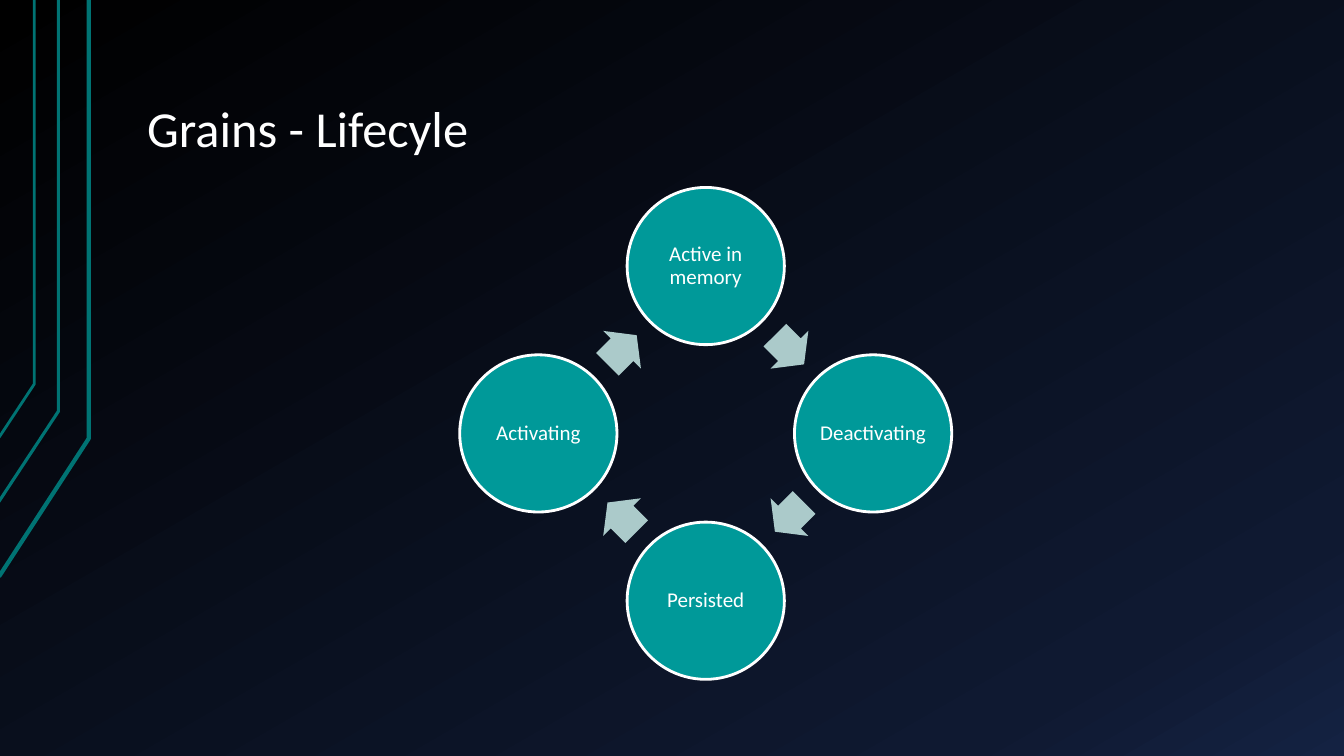
from copy import deepcopy
from math import cos, radians, sin

from pptx import Presentation
from pptx.dml.color import RGBColor
from pptx.enum.shapes import MSO_SHAPE
from pptx.enum.text import MSO_ANCHOR, PP_ALIGN
from pptx.oxml.ns import qn
from pptx.util import Inches, Pt

BACKGROUND_STOPS = [(0, "000000"), (0.85, "0F1931"), (1, "142242")]
CORNER_LINES = [
    ([(-0.01, 5.72), (0.88, 4.35), (0.88, 0)], 3),
    ([(-0.02, 4.99), (0.58, 4.08), (0.58, 0)], 2.25),
    ([(-0.01, 4.34), (0.34, 3.81), (0.34, 0)], 2),
]
STATES = ["Active in memory", "Deactivating", "Persisted", "Activating"]
CENTER_X, CENTER_Y = 7, 4.3
ORBIT = 1.66
CIRCLE_SIZE = 1.56
ARROW_WIDTH, ARROW_HEIGHT = 0.41, 0.53


def color(hex_value):
    """Turn a hex string into a colour."""
    return RGBColor.from_string(hex_value)


def paint_background(slide):
    """Fill the slide with the dark three-stop gradient."""
    fill = slide.background.fill
    fill.gradient()
    fill.gradient_angle = 300
    stop_list = slide.element.find(".//" + qn("a:gsLst"))
    stop_list.append(deepcopy(stop_list[-1]))
    for stop, (position, hex_value) in zip(fill.gradient_stops, BACKGROUND_STOPS):
        stop.position = position
        stop.color.rgb = color(hex_value)


def add_corner_line(slide, points, width):
    """Draw one bent teal line at the left edge."""
    start, *rest = [(Inches(x), Inches(y)) for x, y in points]
    builder = slide.shapes.build_freeform(*start)
    builder.add_line_segments(rest, close=False)
    bent_line = builder.convert_to_shape()
    bent_line.shadow.inherit = False
    bent_line.fill.background()
    bent_line.line.color.rgb = color("007373")
    bent_line.line.width = Pt(width)


def write(frame, wording, size, anchor, align, inset_x, inset_y):
    """Put one white paragraph into a text frame."""
    frame.word_wrap = True
    frame.vertical_anchor = anchor
    frame.margin_left = frame.margin_right = Inches(inset_x)
    frame.margin_top = frame.margin_bottom = Inches(inset_y)
    paragraph = frame.paragraphs[0]
    paragraph.alignment = align
    paragraph.line_spacing = 0.9
    run = paragraph.add_run()
    run.text = wording
    run.font.size = Pt(size)
    run.font.name = "Calibri"
    run.font.color.rgb = color("FFFFFF")


def add_title(slide, wording):
    """Add the slide heading."""
    title = slide.shapes.add_textbox(Inches(1.33), Inches(0.3), Inches(11.33), Inches(1.34))
    write(title.text_frame, wording, 36, MSO_ANCHOR.BOTTOM, PP_ALIGN.LEFT, 0.13, 0.07)


def add_centered(slide, kind, x, y, width, height, hex_value):
    """Add a filled preset shape around a centre point."""
    shape = slide.shapes.add_shape(
        kind, Inches(x - width / 2), Inches(y - height / 2), Inches(width), Inches(height)
    )
    shape.shadow.inherit = False
    shape.fill.solid()
    shape.fill.fore_color.rgb = color(hex_value)
    return shape


def add_state(slide, wording, angle):
    """Add one lifecycle state on the ring."""
    x = CENTER_X + ORBIT * cos(radians(angle))
    y = CENTER_Y + ORBIT * sin(radians(angle))
    state = add_centered(slide, MSO_SHAPE.OVAL, x, y, CIRCLE_SIZE, CIRCLE_SIZE, "009999")
    state.line.color.rgb = color("FFFFFF")
    state.line.width = Pt(2)
    write(state.text_frame, wording, 15, MSO_ANCHOR.MIDDLE, PP_ALIGN.CENTER, 0.02, 0.02)


def add_transition(slide, angle):
    """Add the arrow halfway between two neighbouring states."""
    reach = ORBIT * cos(radians(45))
    x = CENTER_X + reach * cos(radians(angle))
    y = CENTER_Y + reach * sin(radians(angle))
    arrow = add_centered(slide, MSO_SHAPE.RIGHT_ARROW, x, y, ARROW_WIDTH, ARROW_HEIGHT, "ABCACA")
    arrow.line.fill.background()
    arrow.adjustments[0] = 0.6
    arrow.adjustments[1] = 0.5
    arrow.rotation = (angle + 90) % 360


def main():
    """Build and save the lifecycle slide."""
    deck = Presentation()
    deck.slide_width = Inches(13.33)
    deck.slide_height = Inches(7.5)
    slide = deck.slides.add_slide(deck.slide_layouts[6])
    paint_background(slide)
    for points, width in CORNER_LINES:
        add_corner_line(slide, points, width)
    add_title(slide, "Grains - Lifecyle")
    for index, wording in enumerate(STATES):
        angle = 90 * index - 90
        add_state(slide, wording, angle)
        add_transition(slide, angle + 45)
    deck.save("out.pptx")


if __name__ == "__main__":
    main()
